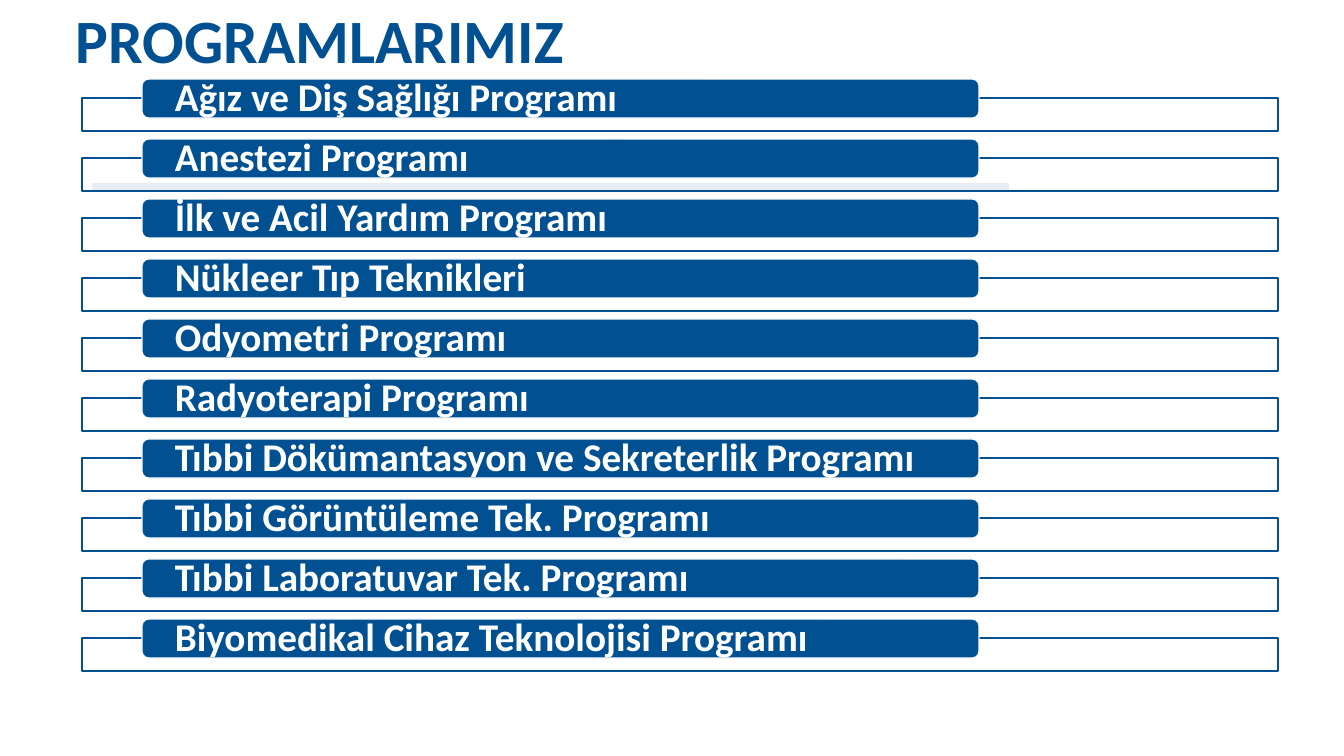
from dataclasses import dataclass

from lxml.etree import SubElement
from pptx import Presentation
from pptx.dml.color import RGBColor
from pptx.enum.shapes import MSO_CONNECTOR, MSO_SHAPE
from pptx.enum.text import MSO_ANCHOR, PP_ALIGN
from pptx.oxml.ns import qn
from pptx.util import Pt

EMU_PER_PX = 914400 / 100.8


@dataclass(frozen=True)
class Theme:
    blue: RGBColor = RGBColor(0x01, 0x50, 0x92)
    white: RGBColor = RGBColor(0xFF, 0xFF, 0xFF)
    font: str = "Calibri"
    title_size: int = 44
    label_size: int = 28
    rule_width: int = 6
    outline_width: int = 1


THEME = Theme()

PROGRAMS = [
    "Ağız ve Diş Sağlığı Programı",
    "Anestezi Programı",
    "İlk ve Acil Yardım Programı",
    "Nükleer Tıp Teknikleri",
    "Odyometri Programı",
    "Radyoterapi Programı",
    "Tıbbi Dökümantasyon ve Sekreterlik Programı",
    "Tıbbi Görüntüleme Tek. Programı",
    "Tıbbi Laboratuvar Tek. Programı",
    "Biyomedikal Cihaz Teknolojisi Programı",
]


def px(length):
    return round(length * EMU_PER_PX)


def write_text(shape, text, *, size, color, inset_x, inset_y=0):
    frame = shape.text_frame
    frame.word_wrap = True
    frame.vertical_anchor = MSO_ANCHOR.MIDDLE
    frame.margin_left = frame.margin_right = px(inset_x)
    frame.margin_top = frame.margin_bottom = px(inset_y)
    paragraph = frame.paragraphs[0]
    paragraph.alignment = PP_ALIGN.LEFT
    paragraph.line_spacing = 0.9
    run = paragraph.add_run()
    run.text = text
    run.font.name = THEME.font
    run.font.size = Pt(size)
    run.font.bold = True
    run.font.color.rgb = color


def add_box(slide, kind, left, top, width, height, *, fill, line, opacity=100):
    shape = slide.shapes.add_shape(kind, px(left), px(top), px(width), px(height))
    shape.shadow.inherit = False
    shape.fill.solid()
    shape.fill.fore_color.rgb = fill
    shape.line.color.rgb = line
    shape.line.width = Pt(THEME.outline_width)
    if opacity < 100:
        color = shape.fill._xPr.find(qn("a:solidFill"))[0]
        SubElement(color, qn("a:alpha")).set("val", str(opacity * 1000))
    return shape


def add_rule(slide, left, top, width):
    rule = slide.shapes.add_connector(
        MSO_CONNECTOR.STRAIGHT, px(left), px(top), px(left + width), px(top))
    rule.line.color.rgb = THEME.blue
    rule.line.width = Pt(THEME.rule_width)
    SubElement(rule._element.spPr, qn("a:effectLst"))


def add_title(slide, left, top, width, height):
    title = slide.shapes.add_textbox(px(left), px(top), px(width), px(height))
    write_text(title, "PROGRAMLARIMIZ", size=THEME.title_size,
               color=THEME.blue, inset_x=10, inset_y=5)


def add_program_row(slide, program, left, top, width):
    # Translucent frame behind the label
    add_box(slide, MSO_SHAPE.RECTANGLE, left, top + 19, width, 33,
            fill=THEME.white, line=THEME.blue, opacity=90)
    # Label bar takes 70% of the row width
    bar = add_box(slide, MSO_SHAPE.ROUNDED_RECTANGLE, left + 60, top,
                  round(width * 0.7), 39, fill=THEME.blue, line=THEME.white)
    write_text(bar, program, size=THEME.label_size, color=THEME.white, inset_x=31)


def add_program_list(slide, left, top, width, height):
    pitch = height // len(PROGRAMS)
    for index, program in enumerate(PROGRAMS):
        add_program_row(slide, program, left, top + index * pitch, width)


def main():
    presentation = Presentation()
    presentation.slide_width = px(1344)
    presentation.slide_height = px(756)
    slide = presentation.slides.add_slide(presentation.slide_layouts[6])

    # The rule lies behind the list
    add_rule(slide, 92, 187, 917)
    add_title(slide, 66, 0, 917, 88)
    add_program_list(slide, 82, 79, 1196, 600)

    presentation.save("out.pptx")


if __name__ == "__main__":
    main()
